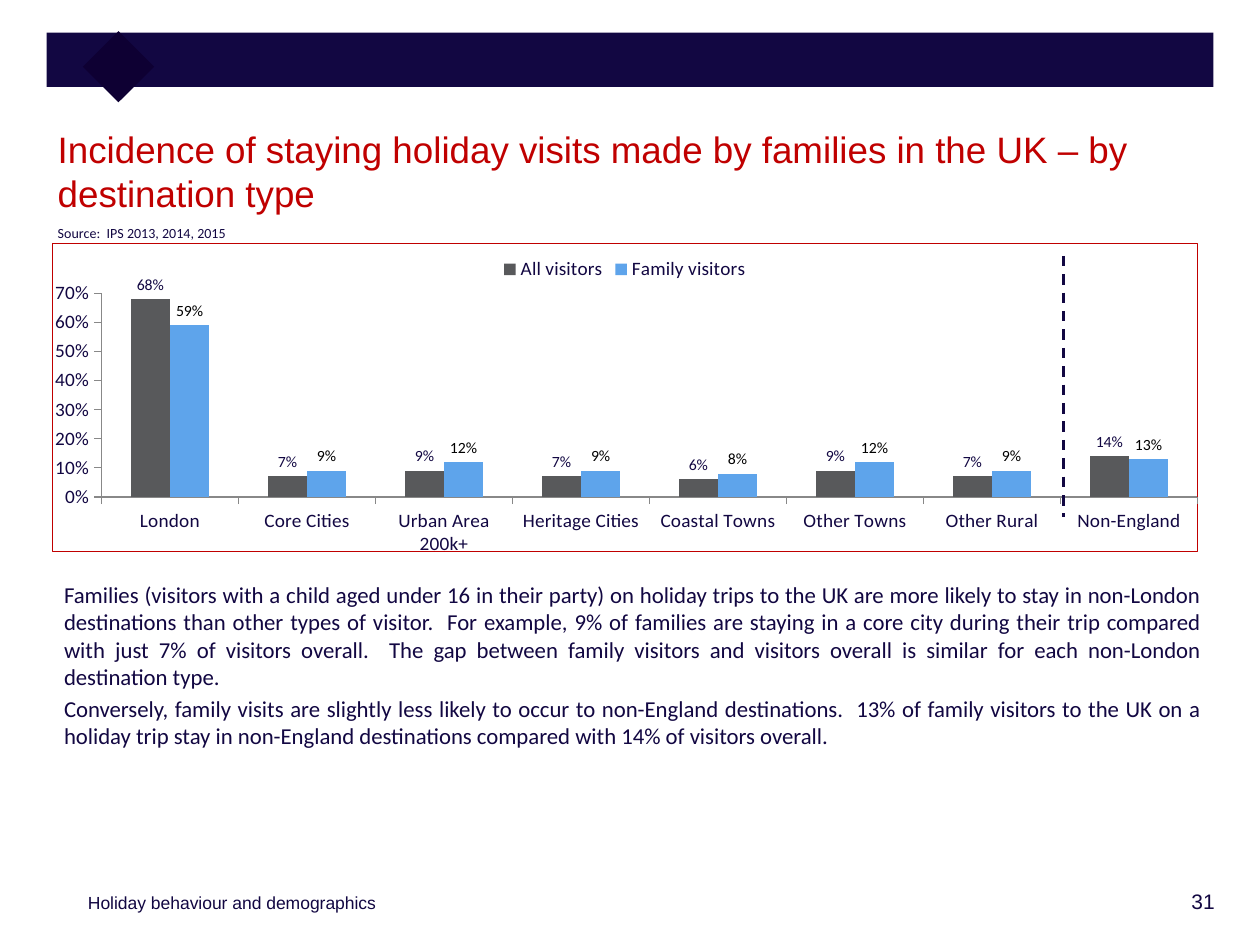
from lxml import etree
from pptx import Presentation
from pptx.chart.data import CategoryChartData
from pptx.dml.color import RGBColor
from pptx.enum.chart import (XL_CHART_TYPE, XL_LABEL_POSITION,
                             XL_LEGEND_POSITION, XL_TICK_MARK)
from pptx.enum.dml import MSO_LINE
from pptx.enum.shapes import MSO_CONNECTOR, MSO_SHAPE
from pptx.enum.text import PP_ALIGN
from pptx.oxml import parse_xml
from pptx.oxml.ns import nsdecls, qn
from pptx.util import Inches, Pt

NAVY, RED, GREY = "120742", "C00000", "888888"
TITLE = "Incidence of staying holiday visits made by families in the UK – by destination type"
SOURCE = "Source:  IPS 2013, 2014, 2015"
BODY = [
    "Families (visitors with a child aged under 16 in their party) on holiday trips to the UK "
    "are more likely to stay in non-London destinations than other types of visitor.  For "
    "example, 9% of families are staying in a core city during their trip compared with just "
    "7% of visitors overall.  The gap between family visitors and visitors overall is similar "
    "for each non-London destination type.",
    "Conversely, family visits are slightly less likely to occur to non-England destinations.  "
    "13% of family visitors to the UK on a holiday trip stay in non-England destinations "
    "compared with 14% of visitors overall.",
]
PLACES = ["London", "Core Cities", "Urban Area 200k+", "Heritage Cities",
          "Coastal Towns", "Other Towns", "Other Rural", "Non-England"]
# name, bar colour, label colour, values
SERIES = [
    ("All visitors", "58595B", NAVY, [.68, .07, .09, .07, .06, .09, .07, .14]),
    ("Family visitors", "5EA4EB", "000000", [.59, .09, .12, .09, .08, .12, .09, .13]),
]
PLOT = {"x": .043, "y": .161, "w": .957, "h": .662}  # shares of the chart

deck = Presentation()
deck.slide_width, deck.slide_height = Inches(10), Inches(7.5)
slide = deck.slides.add_slide(deck.slide_layouts[6])
shapes = slide.shapes


def color(code):
    return RGBColor.from_string(code)


def text(lines, box, size=13, font="Calibri", ink=NAVY, align=PP_ALIGN.LEFT):
    frame = shapes.add_textbox(*map(Inches, box)).text_frame
    frame.word_wrap = True
    for i, line in enumerate(lines):
        para = frame.paragraphs[0] if i == 0 else frame.add_paragraph()
        para.alignment = align
        if i:
            para.space_before = Pt(size * .2)
        run = para.add_run()
        run.text = line
        run.font.size, run.font.name = Pt(size), font
        run.font.color.rgb = color(ink)


def block(box, fill, turn=0):
    shape = shapes.add_shape(MSO_SHAPE.RECTANGLE, *map(Inches, box))
    shape.shadow.inherit = False
    shape.fill.solid()
    shape.fill.fore_color.rgb = color(fill)
    shape.line.fill.background()
    shape.rotation = turn


def style(axis):
    axis.has_major_gridlines = False
    axis.major_tick_mark = XL_TICK_MARK.OUTSIDE
    axis.minor_tick_mark = XL_TICK_MARK.NONE
    axis.format.line.color.rgb = color(GREY)
    axis.format.line.width = Pt(.75)


# Header band with diamond
block((.37, .26, 9.26, .43), NAVY)
block((.74, .33, .4, .4), "0E0033", turn=45)

# Texts
text([TITLE], (.36, .96, 9.36, .61), size=21, font="Arial", ink=RED)
text(BODY, (.41, 4.56, 9.21, 2.28), align=PP_ALIGN.JUSTIFY)
text([SOURCE], (.36, 1.73, 1.59, .18), size=8)
text(["Holiday behaviour and demographics"], (.6, 7.03, 2.67, .3), size=10, font="Arial")
text(["31"], (8.53, 7, 1.21, .36), size=12, font="Arial", align=PP_ALIGN.RIGHT)

# Chart
data = CategoryChartData(number_format="0%")
data.categories = PLACES
for name, _, _, vals in SERIES:
    data.add_series(name, vals)
chart = shapes.add_chart(XL_CHART_TYPE.COLUMN_CLUSTERED,
                         *map(Inches, (.41, 1.93, 9.1, 2.48)), data).chart
chart.has_title = False
chart.font.size, chart.font.name = Pt(11), "Calibri"
chart.font.color.rgb = color(NAVY)
chart.has_legend = True
chart.legend.position = XL_LEGEND_POSITION.TOP
chart.legend.include_in_layout = False

# Axes
style(chart.category_axis)
values = chart.value_axis
style(values)
values.minimum_scale, values.maximum_scale, values.major_unit = 0, .7, .1
values.tick_labels.number_format = "0%"
values.tick_labels.number_format_is_linked = False

# Bars and their labels
plot = chart.plots[0]
plot.gap_width, plot.overlap, plot.vary_by_categories = 150, 0, False
for bars, (_, fill, ink, _) in zip(plot.series, SERIES):
    bars.format.fill.solid()
    bars.format.fill.fore_color.rgb = color(fill)
    labels = bars.data_labels
    labels.show_value = True
    labels.position = XL_LABEL_POSITION.OUTSIDE_END
    labels.number_format, labels.number_format_is_linked = "0%", False
    labels.font.size, labels.font.name = Pt(9), "Calibri"
    labels.font.color.rgb = color(ink)

# Fixed plot area
root = chart.element
area = root.find(".//" + qn("c:plotArea"))
for old in area.findall(qn("c:layout")):
    area.remove(old)
rules = [("layoutTarget", "inner"), ("xMode", "edge"), ("yMode", "edge"), *PLOT.items()]
layout = parse_xml(f"<c:layout {nsdecls('c')}><c:manualLayout/></c:layout>")
for tag, val in rules:
    etree.SubElement(layout[0], qn("c:" + tag), val=str(val))
area.insert(0, layout)

# Chart border
root.find(qn("c:chart")).addnext(parse_xml(
    f"<c:spPr {nsdecls('c', 'a')}><a:noFill/><a:ln w=\"{Pt(.75)}\"><a:solidFill>"
    f"<a:srgbClr val=\"{RED}\"/></a:solidFill></a:ln></c:spPr>"))

# Dashed line before Non-England
rule = shapes.add_connector(MSO_CONNECTOR.STRAIGHT, *map(Inches, (8.44, 2.03, 8.44, 4.1)))
rule.line.color.rgb = color(NAVY)
rule.line.width, rule.line.dash_style = Pt(1.5), MSO_LINE.DASH
etree.SubElement(rule.element.spPr, qn("a:effectLst"))

deck.save("out.pptx")
